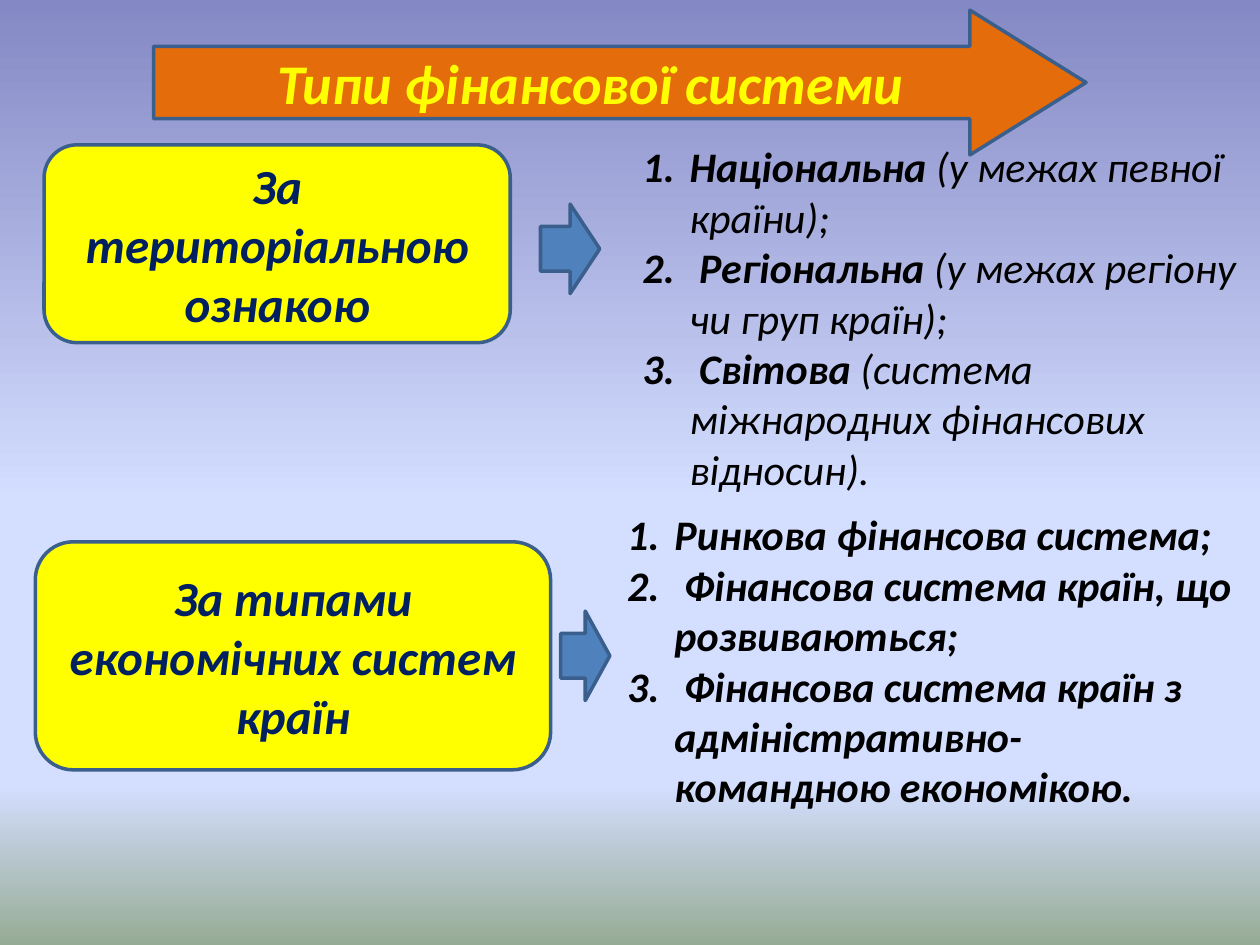
import pptx
import pptx.dml.color
import pptx.enum.shapes
import pptx.enum.text
import pptx.oxml
import pptx.oxml.ns
import pptx.util

SHAPES = pptx.enum.shapes.MSO_SHAPE
ALIGN = pptx.enum.text.PP_ALIGN
ANCHOR = pptx.enum.text.MSO_ANCHOR
COLUMNS, ROWS = 100, 75


def color(hex_value):
    return pptx.dml.color.RGBColor.from_string(hex_value)


class FinanceSlide:
    """Style and current slide; positions are (column, row, columns, rows)."""

    font = "Calibri"
    outline = "3A5F8C"
    yellow, navy, orange, blue, black = "FFFF00", "002060", "E46C0A", "4F81BD", "000000"
    sky = [(0, "8488C4"), (53, "D4DEFF"), (83, "D4DEFF"), (100, "96AB94")]

    def __init__(self, deck):
        self.column = deck.slide_width / COLUMNS
        self.row = deck.slide_height / ROWS
        self.slide = deck.slides.add_slide(deck.slide_layouts[6])

    def place(self, left, top, width, height):
        return [round(n * unit) for n, unit in zip(
            (left, top, width, height), (self.column, self.row) * 2)]

    def background(self):
        fill = self.slide.background.fill
        fill.gradient()
        fill.gradient_angle = 270
        qn = pptx.oxml.ns.qn
        stops = self.slide.element.find(".//" + qn("a:gsLst"))
        for stop in list(stops):
            stops.remove(stop)
        for percent, shade in self.sky:
            stop = stops.makeelement(qn("a:gs"), {"pos": str(percent * 1000)})
            stop.append(stop.makeelement(qn("a:srgbClr"), {"val": shade}))
            stops.append(stop)

    def format_run(self, run, size, shade, bold=True):
        run.font.name = self.font
        run.font.size = pptx.util.Pt(size)
        run.font.bold = bold
        run.font.italic = True
        run.font.color.rgb = color(shade)

    def block(self, preset, cell, fill, text="", size=28, shade=navy):
        block = self.slide.shapes.add_shape(preset, *self.place(*cell))
        block.shadow.inherit = False
        block.fill.solid()
        block.fill.fore_color.rgb = color(fill)
        block.line.color.rgb = color(self.outline)
        block.line.width = pptx.util.Pt(2)
        if text:
            frame = block.text_frame
            frame.text = text
            frame.vertical_anchor = ANCHOR.MIDDLE
            frame.paragraphs[0].alignment = ALIGN.CENTER
            self.format_run(frame.paragraphs[0].runs[0], size, shade)
        return block

    def title_arrow(self, cell, text):
        arrow = self.block(SHAPES.RIGHT_ARROW, cell, self.orange, text, 32, self.yellow)
        arrow.adjustments[1] = 0.802

    def criterion(self, cell, text):
        self.block(SHAPES.ROUNDED_RECTANGLE, cell, self.yellow, text)

    def pointer(self, cell):
        self.block(SHAPES.RIGHT_ARROW, cell, self.blue)

    def numbered_list(self, cell, items):
        """Each item is a (bold name, plain explanation) pair."""
        frame = self.slide.shapes.add_textbox(*self.place(*cell)).text_frame
        frame.word_wrap = True
        frame.auto_size = pptx.enum.text.MSO_AUTO_SIZE.SHAPE_TO_FIT_TEXT
        indent = round(3.75 * self.column)
        for index, (name, explanation) in enumerate(items):
            paragraph = frame.add_paragraph() if index else frame.paragraphs[0]
            paragraph.text = name
            if explanation:
                paragraph.add_run().text = explanation
            for position, run in enumerate(paragraph.runs):
                self.format_run(run, 24, self.black, bold=position == 0)
            properties = paragraph._p.get_or_add_pPr()
            properties.set("marL", str(indent))
            properties.set("indent", str(-indent))
            pptx.oxml.ns.qn("a:buAutoNum")
            numbering = properties.makeelement(
                pptx.oxml.ns.qn("a:buAutoNum"), {"type": "arabicPeriod"})
            properties.append(numbering)


def main():
    deck = pptx.Presentation()
    deck.slide_width = pptx.util.Inches(10)
    deck.slide_height = pptx.util.Inches(7.5)

    types = FinanceSlide(deck)
    types.background()
    types.title_arrow((12.2, 0.8, 74, 11.5), "Типи фінансової системи")

    types.criterion((3.5, 11.5, 37, 15.7), "За територіальною ознакою")
    types.pointer((42.9, 16.2, 4.7, 7.1))
    types.numbered_list((50, 10.7, 50, 29.3), [
        ("Національна ", "(у межах певної країни);"),
        (" Регіональна ", "(у межах регіону чи груп країн);"),
        (" Світова ", "(система міжнародних фінансових відносин)."),
    ])

    types.criterion((2.8, 43, 40.9, 18.1), "За типами економічних систем країн")
    types.pointer((44.5, 48.5, 3.9, 7.1))
    types.numbered_list((48.8, 39.9, 50, 25.2), [
        ("Ринкова фінансова система;", ""),
        (" Фінансова система країн, що розвиваються;", ""),
        (" Фінансова система країн з адміністративно-командною економікою.", ""),
    ])

    deck.save("out.pptx")


if __name__ == "__main__":
    main()
